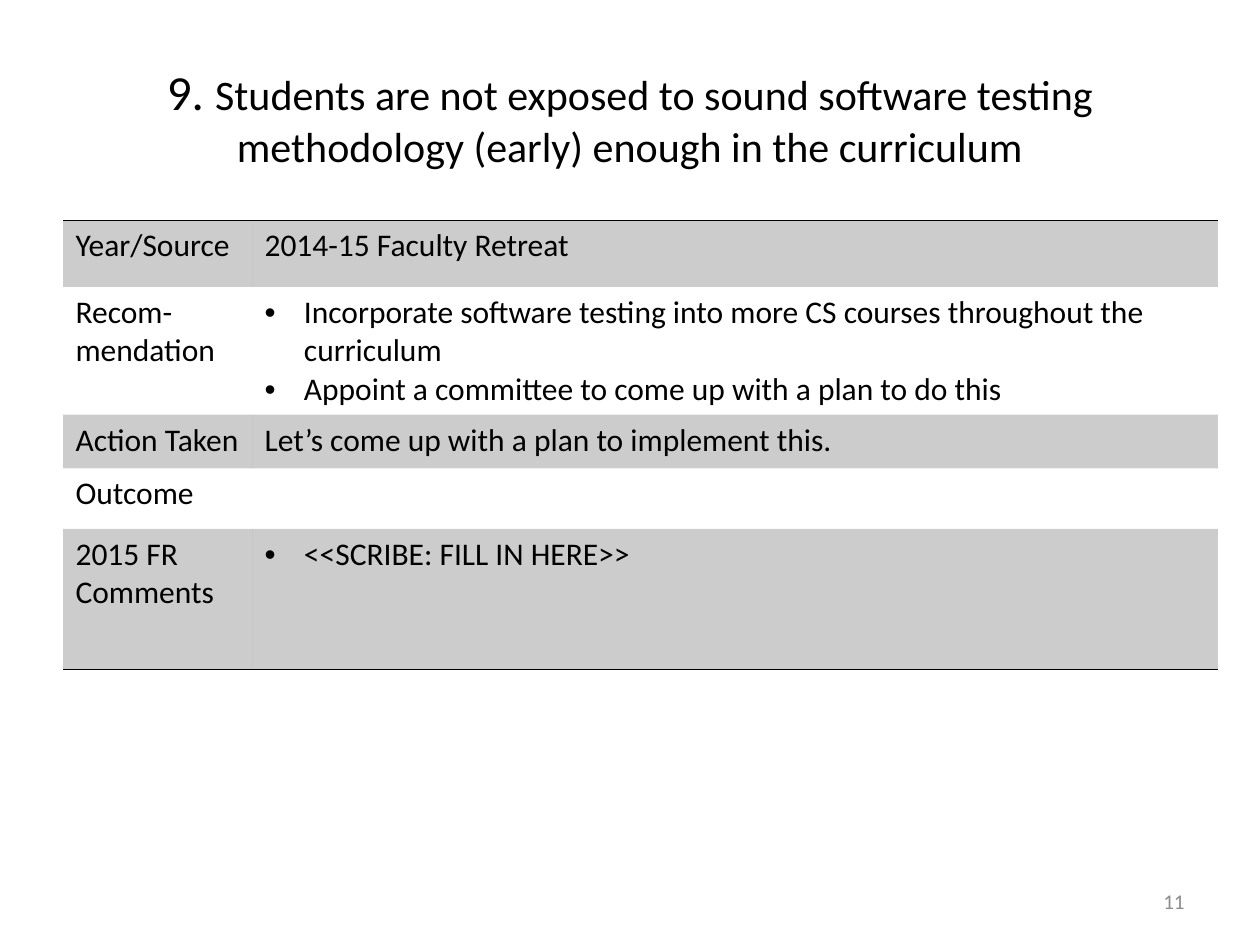
from lxml import etree
from pptx import Presentation
from pptx.dml.color import RGBColor
from pptx.enum.text import MSO_ANCHOR, PP_ALIGN
from pptx.oxml.ns import qn
from pptx.util import Pt

MIDDLE, TOP = MSO_ANCHOR.MIDDLE, MSO_ANCHOR.TOP
LEFT, CENTER, RIGHT = PP_ALIGN.LEFT, PP_ALIGN.CENTER, PP_ALIGN.RIGHT

# Content
TITLE = [
    ("9. ", "number"),
    ("Students are not exposed to sound software testing "
     "methodology (early) enough in the curriculum", "title"),
]
# Each row: height, label lines, text lines, whether the text is bulleted
ROWS = [
    (38, ["Year/Source"], ["2014-15 Faculty Retreat"], False),
    (73, ["Recom-", "mendation"],
     ["Incorporate software testing into more CS courses throughout the curriculum",
      "Appoint a committee to come up with a plan to do this"], True),
    (30.7, ["Action Taken"], ["Let’s come up with a plan to implement this."], False),
    (34.6, ["Outcome"], [], False),
    (80.3, ["2015 FR Comments"], ["<<SCRIBE: FILL IN HERE>>"], True),
]
PAGE_NUMBER = [("11", "page")]

# Layout and theme
SLIDE_SIZE = (720, 540)
TITLE_BOX = (36, 21.6, 648, 90)
PAGE_BOX = (516, 500.4, 168, 28.8)
TABLE_LEFT, TABLE_TOP = 36, 126
COLUMN_WIDTHS = (108, 552)
BULLET_INDENT = 22.5
PLAIN_TABLE_STYLE = "{2D5ABB26-0587-4C30-8999-92F81FD0307C}"
THEME = {
    "font": "Calibri",
    "ink": "000000",
    "band_alpha": 20,
    "rule_width": 1,
    "styles": {  # size, colour
        "number": (28, "000000"),
        "title": (24, "000000"),
        "body": (18, "000000"),
        "page": (12, "8C8C8C"),
    },
}


def add_runs(paragraph, runs, alignment=LEFT):
    paragraph.alignment = alignment
    for text, style in runs:
        size, color = THEME["styles"][style]
        run = paragraph.add_run()
        run.text = text
        run.font.name = THEME["font"]
        run.font.size = Pt(size)
        run.font.color.rgb = RGBColor.from_string(color)


def add_text(slide, box, runs, alignment):
    frame = slide.shapes.add_textbox(*map(Pt, box)).text_frame
    frame.word_wrap = True
    frame.vertical_anchor = MIDDLE
    add_runs(frame.paragraphs[0], runs, alignment)


def add_bullet(paragraph):
    properties = paragraph._p.get_or_add_pPr()
    properties.set("marL", str(Pt(BULLET_INDENT)))
    properties.set("indent", str(-Pt(BULLET_INDENT)))
    etree.SubElement(properties, qn("a:buFont"), typeface="Arial")
    etree.SubElement(properties, qn("a:buChar"), char="•")


def fill_cell(cell, lines, bulleted):
    cell.vertical_anchor = TOP
    frame = cell.text_frame
    frame.paragraphs[0].font.size = Pt(THEME["styles"]["body"][0])
    for index, line in enumerate(lines):
        paragraph = frame.add_paragraph() if index else frame.paragraphs[0]
        add_runs(paragraph, [(line, "body")])
        if bulleted:
            add_bullet(paragraph)


def shade_cell(cell, shaded):
    if not shaded:
        cell.fill.background()
        return
    cell.fill.solid()
    cell.fill.fore_color.rgb = RGBColor.from_string(THEME["ink"])
    color = cell._tc.tcPr.find(".//" + qn("a:srgbClr"))
    etree.SubElement(color, qn("a:alpha"), val=str(THEME["band_alpha"] * 1000))


def add_rule(cell, tag):
    line = etree.Element(qn(tag), w=str(Pt(THEME["rule_width"])))
    fill = etree.SubElement(line, qn("a:solidFill"))
    etree.SubElement(fill, qn("a:srgbClr"), val=THEME["ink"])
    cell._tc.get_or_add_tcPr().insert(0, line)


def add_review_table(slide):
    height = sum(row[0] for row in ROWS)
    table = slide.shapes.add_table(
        len(ROWS), len(COLUMN_WIDTHS), Pt(TABLE_LEFT), Pt(TABLE_TOP),
        Pt(sum(COLUMN_WIDTHS)), Pt(height)).table
    table.first_row = False
    table._tbl.tblPr.find(qn("a:tableStyleId")).text = PLAIN_TABLE_STYLE
    for column, width in zip(table.columns, COLUMN_WIDTHS):
        column.width = Pt(width)
    for index, (row_height, label, lines, bulleted) in enumerate(ROWS):
        table.rows[index].height = Pt(row_height)
        label_cell, text_cell = table.rows[index].cells
        fill_cell(label_cell, label, False)
        fill_cell(text_cell, lines, bulleted)
        for cell in (label_cell, text_cell):
            shade_cell(cell, index % 2 == 0)
            if index == 0:
                add_rule(cell, "a:lnT")
            if index == len(ROWS) - 1:
                add_rule(cell, "a:lnB")


def main():
    presentation = Presentation()
    presentation.slide_width, presentation.slide_height = map(Pt, SLIDE_SIZE)
    slide = presentation.slides.add_slide(presentation.slide_layouts[6])
    # Title, table, page number
    add_text(slide, TITLE_BOX, TITLE, CENTER)
    add_review_table(slide)
    add_text(slide, PAGE_BOX, PAGE_NUMBER, RIGHT)
    presentation.save("out.pptx")


if __name__ == "__main__":
    main()
